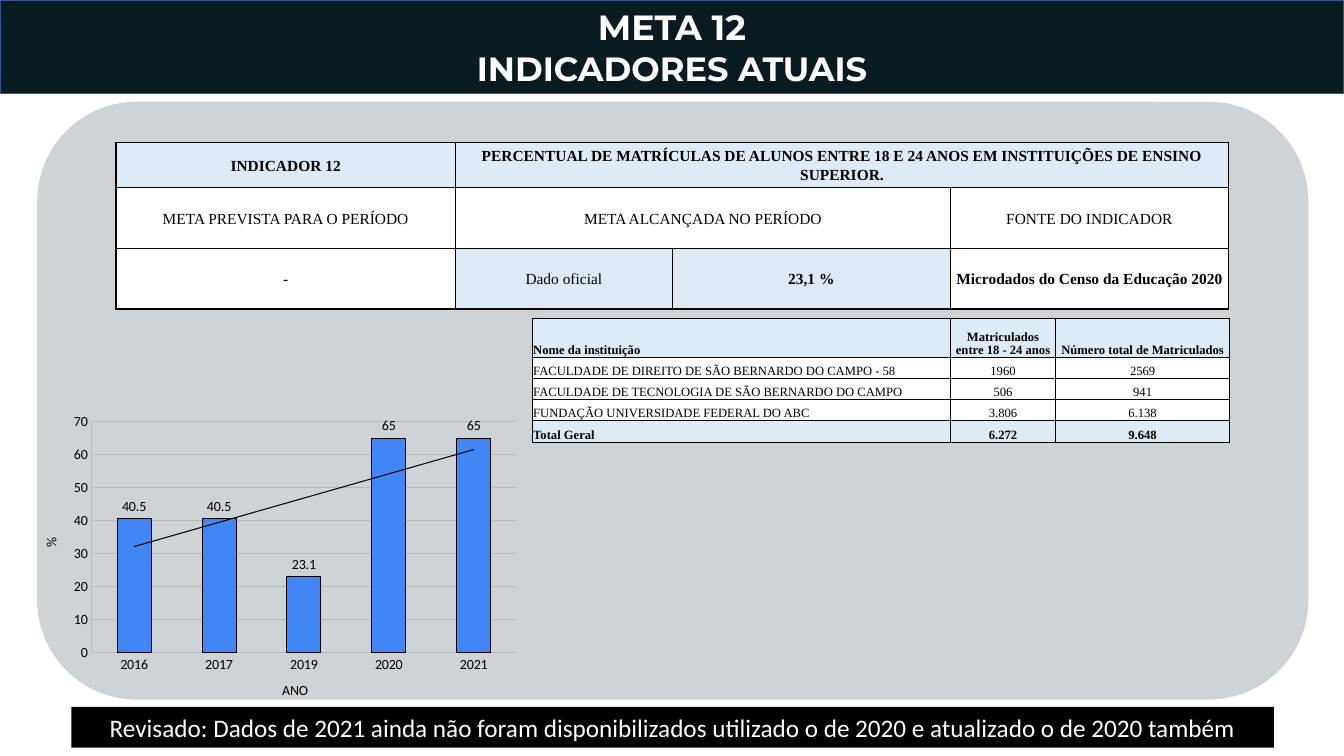
from lxml import etree
from pptx import Presentation
from pptx.chart.data import CategoryChartData
from pptx.dml.color import RGBColor
from pptx.enum.chart import XL_CHART_TYPE, XL_LABEL_POSITION, XL_TICK_MARK
from pptx.enum.shapes import MSO_SHAPE
from pptx.enum.text import MSO_ANCHOR, MSO_AUTO_SIZE, PP_ALIGN
from pptx.oxml import parse_xml
from pptx.oxml.ns import nsdecls, qn
from pptx.util import Pt

LEFT, CENTER = PP_ALIGN.LEFT, PP_ALIGN.CENTER
MIDDLE, BOTTOM = MSO_ANCHOR.MIDDLE, MSO_ANCHOR.BOTTOM
RECTANGLE, ROUNDED = MSO_SHAPE.RECTANGLE, MSO_SHAPE.ROUNDED_RECTANGLE
NO_AUTOFIT = MSO_AUTO_SIZE.NONE
COLUMNS = XL_CHART_TYPE.COLUMN_CLUSTERED
OUTSIDE_END = XL_LABEL_POSITION.OUTSIDE_END
NO_TICKS = XL_TICK_MARK.NONE

TITLE_ONLY = 5
SERIF, SANS, DISPLAY = "Times New Roman", "Calibri", "Montserrat"
BLACK, WHITE, NAVY, PANEL = "000000", "FFFFFF", "0A1A21", "CED3D8"
PALE, ICE, BAR, GRID = "DEEBF7", "DDEBF7", "4285F4", "B7B7B7"

# Each entry: text, first column, last column, fill, bold
INDICATOR_ROWS = [
    [("INDICADOR 12", 0, 0, PALE, True),
     ("PERCENTUAL DE MATRÍCULAS DE ALUNOS ENTRE 18 E 24 ANOS EM "
      "INSTITUIÇÕES DE ENSINO SUPERIOR.", 1, 3, PALE, True)],
    [("META PREVISTA PARA O PERÍODO", 0, 0, WHITE, False),
     ("META ALCANÇADA NO PERÍODO", 1, 2, WHITE, False),
     ("FONTE DO INDICADOR", 3, 3, WHITE, False)],
    [("-", 0, 0, WHITE, False),
     ("Dado oficial", 1, 1, PALE, False),
     ("23,1 %", 2, 2, PALE, True),
     ("Microdados do Censo da Educação 2020", 3, 3, WHITE, True)],
]
ENROLMENT_ROWS = [
    ("Nome da instituição", "Matriculados entre 18 - 24 anos",
     "Número total de Matriculados"),
    ("FACULDADE DE DIREITO DE SÃO BERNARDO DO CAMPO - 58", "1960", "2569"),
    ("FACULDADE DE TECNOLOGIA DE SÃO BERNARDO DO CAMPO", "506", "941"),
    ("FUNDAÇÃO UNIVERSIDADE FEDERAL DO ABC", "3.806", "6.138"),
    ("Total Geral", "6.272", "9.648"),
]


def color(hex_value):
    return RGBColor.from_string(hex_value)


def paint(target, hex_value):
    target.fill.solid()
    target.fill.fore_color.rgb = color(hex_value)


def format_font(font, name=SANS, size=10, hex_value=BLACK, bold=False):
    font.name, font.size, font.bold = name, Pt(size), bold
    font.color.rgb = color(hex_value)


def write(para, text, align=CENTER, spacing=None, after=0, **font_format):
    para.alignment = align
    para.space_before, para.space_after = Pt(0), Pt(after)
    if spacing:
        para.line_spacing = spacing
    span = para.add_run()
    span.text = text
    format_font(span.font, **font_format)


def add_box(page, kind, left, top, width, height, fill):
    box = page.shapes.add_shape(kind, Pt(left), Pt(top), Pt(width), Pt(height))
    box.shadow.inherit = False
    paint(box, fill)
    box.line.fill.background()
    return box


def add_title(page, lines):
    title = page.shapes.title
    title.left, title.top, title.width, title.height = Pt(0), Pt(0), Pt(960), Pt(67)
    paint(title, NAVY)
    title.line.color.rgb = color("325491")
    title.line.width = Pt(1)
    frame = title.text_frame
    frame.auto_size, frame.vertical_anchor, frame.word_wrap = NO_AUTOFIT, MIDDLE, True
    for index, (text, size) in enumerate(lines):
        para = frame.add_paragraph() if index else frame.paragraphs[0]
        write(para, text, name=DISPLAY, size=size, hex_value=WHITE, bold=True)


def add_table(page, left, top, widths, heights):
    table = page.shapes.add_table(len(heights), len(widths), Pt(left), Pt(top),
                                  Pt(sum(widths)), Pt(sum(heights))).table
    table.first_row = table.horz_banding = False
    for column, width in zip(table.columns, widths):
        column.width = Pt(width)
    for row, height in zip(table.rows, heights):
        row.height = Pt(height)
    return table


def set_cell(cell, fill, side_margin, anchor, borders):
    """Format a cell; borders are the left, right, top and bottom widths."""
    cell.margin_left = cell.margin_right = Pt(side_margin)
    cell.margin_top, cell.margin_bottom = Pt(0.7), Pt(0)
    cell.vertical_anchor = anchor
    properties = cell._tc.get_or_add_tcPr()
    for side, width in zip("LRTB", borders):
        line = etree.SubElement(properties, qn(f"a:ln{side}"), w=str(Pt(width)))
        solid = etree.SubElement(line, qn("a:solidFill"))
        etree.SubElement(solid, qn("a:srgbClr"), val=BLACK)
    paint(cell, fill)


def add_indicator_table(page):
    table = add_table(page, 82.8, 101.5, [242.6, 154.8, 198.7, 198.7], [32.4, 43.4, 43.4])
    for row, entries in enumerate(INDICATOR_ROWS):
        for text, first, last, fill, bold in entries:
            for column in range(first, last + 1):
                set_cell(table.cell(row, column), fill, 3.6, MIDDLE, [1] * 4)
            cell = table.cell(row, first)
            if last > first:
                cell.merge(table.cell(row, last))
            write(cell.text_frame.paragraphs[0], text, spacing=1.07, after=8,
                  name=SERIF, size=11, bold=bold)


def add_enrolment_table(page):
    table = add_table(page, 380.2, 227.5, [298.8, 74.9, 124.5], [28, 15, 15, 15, 15.6])
    last_row, last_column = len(ENROLMENT_ROWS) - 1, 2
    for row, texts in enumerate(ENROLMENT_ROWS):
        strong = row in (0, last_row)
        for column, text in enumerate(texts):
            outer = (column == 0, column == last_column, row == 0, row == last_row)
            cell = table.cell(row, column)
            set_cell(cell, ICE if strong else WHITE, 0.7, BOTTOM,
                     [1 if edge else 0.5 for edge in outer])
            write(cell.text_frame.paragraphs[0], text, align=CENTER if column else LEFT,
                  name=SERIF, size=9, bold=strong)


def format_axis(axis, title):
    axis.major_tick_mark = axis.minor_tick_mark = NO_TICKS
    axis.format.line.color.rgb = color(GRID)
    format_font(axis.tick_labels.font)
    write(axis.axis_title.text_frame.paragraphs[0], title)


def add_trendline(series):
    trendline = parse_xml(
        f'<c:trendline {nsdecls("c", "a")}><c:spPr><a:ln w="{Pt(0.75)}"><a:solidFill>'
        f'<a:srgbClr val="{BLACK}"/></a:solidFill></a:ln></c:spPr>'
        '<c:trendlineType val="linear"/><c:dispRSqr val="0"/><c:dispEq val="0"/>'
        '</c:trendline>')
    series._element.find(qn("c:cat")).addprevious(trendline)


def place_plot(chart, **fractions):
    """Fix the inner plot area as fractions of the chart frame."""
    area = chart._chartSpace.chart.plotArea
    for old in area.findall(qn("c:layout")):
        area.remove(old)
    values = "".join(f'<c:{key} val="{value}"/>' for key, value in fractions.items())
    area.insert(0, parse_xml(
        f'<c:layout {nsdecls("c")}><c:manualLayout><c:layoutTarget val="inner"/>'
        f'<c:xMode val="edge"/><c:yMode val="edge"/>{values}</c:manualLayout></c:layout>'))


def add_chart(page):
    data = CategoryChartData()
    data.categories = ["2016", "2017", "2019", "2020", "2021"]
    data.add_series("Series 1", [40.5, 40.5, 23.1, 65, 65])
    chart = page.shapes.add_chart(COLUMNS, Pt(15), Pt(290), Pt(361), Pt(223), data).chart
    chart.has_legend = chart.has_title = False
    format_font(chart.font)
    format_axis(chart.category_axis, "ANO")
    format_axis(chart.value_axis, "%")
    gridline = chart.value_axis.major_gridlines.format.line
    gridline.color.rgb = color(GRID)
    gridline.width = Pt(0.75)
    plot = chart.plots[0]
    plot.gap_width, plot.vary_by_categories = 150, False
    series = plot.series[0]
    series.invert_if_negative = False
    paint(series.format, BAR)
    series.format.line.color.rgb = color(BLACK)
    series.format.line.width = Pt(0.75)
    labels = series.data_labels
    labels.show_value, labels.position = True, OUTSIDE_END
    format_font(labels.font)
    add_trendline(series)
    place_plot(chart, x=0.14, y=0.05, w=0.84, h=0.74)


def add_note(page, text):
    box = add_box(page, RECTANGLE, 51, 505, 859, 29, BLACK)
    box.text_frame.word_wrap = True
    box.text_frame.vertical_anchor = MIDDLE
    write(box.text_frame.paragraphs[0], text, size=18, hex_value=WHITE)


def main():
    deck = Presentation()
    deck.slide_width, deck.slide_height = Pt(960), Pt(540)
    page = deck.slides.add_slide(deck.slide_layouts[TITLE_ONLY])
    # Title band and background panel
    add_title(page, [("META 12", 25), ("INDICADORES ATUAIS", 24)])
    add_box(page, ROUNDED, 26.6, 72.7, 908, 427, PANEL)
    # Indicator data
    add_indicator_table(page)
    add_enrolment_table(page)
    add_chart(page)
    # Revision note
    add_note(page, "Revisado: Dados de 2021 ainda não foram disponibilizados "
                   "utilizado o de 2020 e atualizado o de 2020 também")
    deck.save("out.pptx")


if __name__ == "__main__":
    main()
